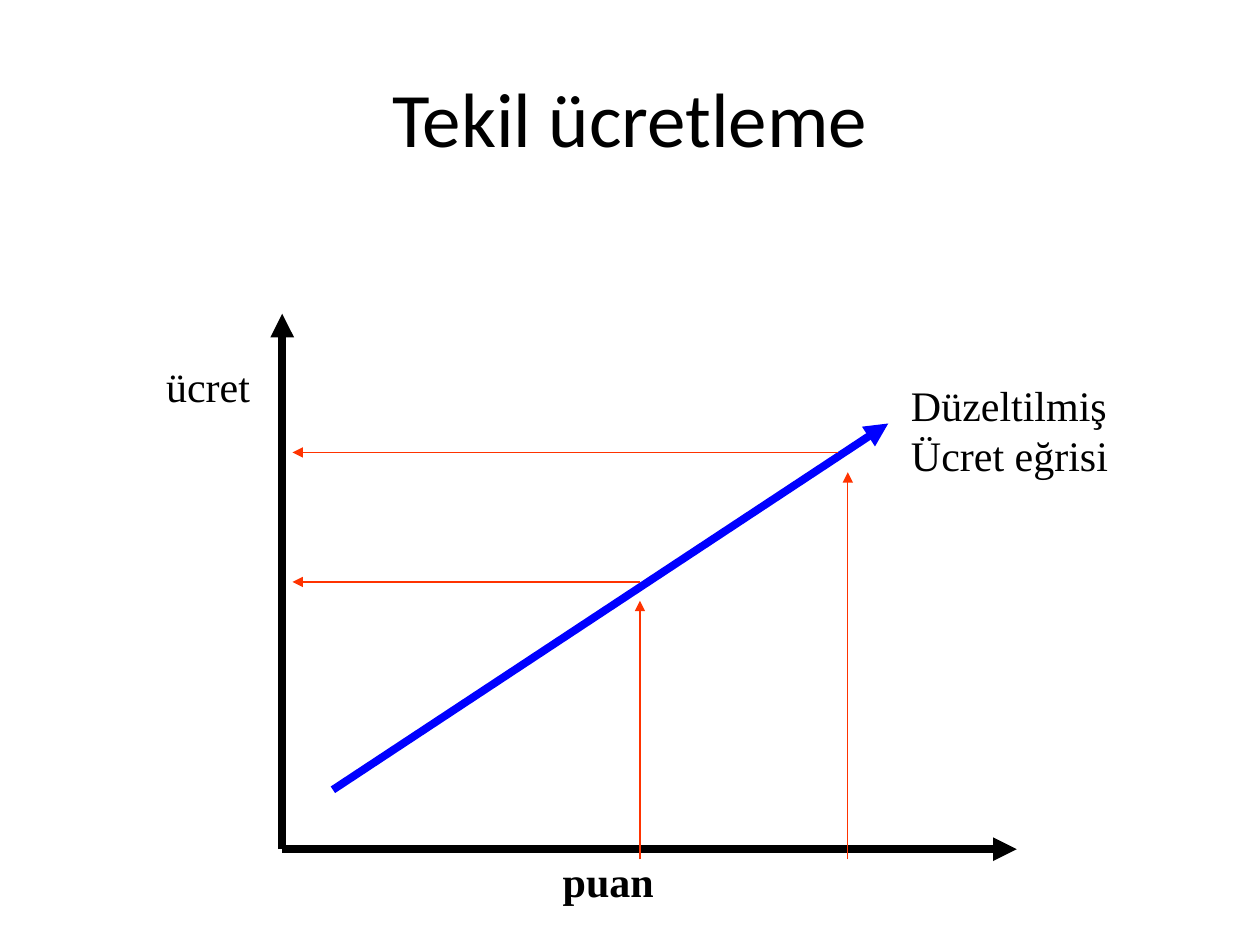
from dataclasses import dataclass

from lxml.etree import SubElement
from pptx import Presentation
from pptx.dml.color import RGBColor
from pptx.enum.shapes import MSO_CONNECTOR
from pptx.enum.text import MSO_ANCHOR, MSO_AUTO_SIZE, PP_ALIGN
from pptx.oxml.ns import qn
from pptx.util import Inches, Pt


@dataclass(frozen=True)
class Theme:
    ink: RGBColor = RGBColor(0, 0, 0)
    curve: RGBColor = RGBColor(0, 0, 255)
    guide: RGBColor = RGBColor(255, 51, 0)
    heading_font: str = "Calibri"
    label_font: str = "Times New Roman"
    heading_size: int = 44
    label_size: int = 24
    thick: float = 4.5
    thin: float = 0.75


@dataclass(frozen=True)
class Box:
    left: float
    top: float
    width: float
    height: float

    def across(self, percent):
        return Inches(self.width * percent / 100)

    def up(self, percent):
        return Inches(self.height * percent / 100)

    def point(self, x, y):
        return Inches(self.left) + self.across(x), Inches(self.top) + self.up(100 - y)


THEME = Theme()


def write(frame, wording, font, size, bold=False):
    frame.text = wording
    paragraph = frame.paragraphs[0]
    face = paragraph.runs[0].font
    face.name = font
    face.size = Pt(size)
    face.bold = bold
    face.color.rgb = THEME.ink
    return paragraph


def add_heading(slide, box, wording):
    heading = slide.shapes.title
    heading.left, heading.top = box.point(0, 100)
    heading.width, heading.height = box.across(100), box.up(100)
    heading.text_frame.vertical_anchor = MSO_ANCHOR.MIDDLE
    paragraph = write(heading.text_frame, wording, THEME.heading_font, THEME.heading_size)
    paragraph.alignment = PP_ALIGN.CENTER


def add_arrow(slide, box, start, end, color, weight):
    arrow = slide.shapes.add_connector(
        MSO_CONNECTOR.STRAIGHT, *box.point(*start), *box.point(*end)
    )
    arrow.line.color.rgb = color
    arrow.line.width = Pt(weight)
    SubElement(arrow.line._get_or_add_ln(), qn("a:tailEnd"), type="triangle")
    SubElement(arrow._element.spPr, qn("a:effectLst"))


def add_label(slide, box, corner, size, wording, bold=False):
    width, height = size
    label = slide.shapes.add_textbox(*box.point(*corner), box.across(width), box.up(height))
    frame = label.text_frame
    frame.word_wrap = True
    frame.auto_size = MSO_AUTO_SIZE.SHAPE_TO_FIT_TEXT
    write(frame, wording, THEME.label_font, THEME.label_size, bold)


def add_wage_plot(slide, box):
    origin = (0, 0)
    for axis_end in ((0, 100), (100, 0)):
        add_arrow(slide, box, origin, axis_end, THEME.ink, THEME.thick)
    add_arrow(slide, box, (6.9, 11.1), (82.5, 79.5), THEME.curve, THEME.thick)

    guide_foot, wage_edge = -1.9, 1.4
    for points, rise_end, wage_start, wage in (
        (48.7, 46.4, 48.7, 49.9),
        (77, 70.4, 75.6, 74.1),
    ):
        add_arrow(slide, box, (points, guide_foot), (points, rise_end), THEME.guide, THEME.thin)
        add_arrow(slide, box, (wage_start, wage), (wage_edge, wage), THEME.guide, THEME.thin)

    add_label(slide, box, (36.5, 0), (50, 11.8), "puan", bold=True)
    add_label(slide, box, (-17.5, 92.5), (17.5, 11.8), "ücret")
    add_label(slide, box, (83.9, 88.9), (41.9, 21.2), "Düzeltilmiş Ücret eğrisi")


def main():
    deck = Presentation()
    deck.slide_width, deck.slide_height = Inches(10), Inches(7.5)
    slide = deck.slides.add_slide(deck.slide_layouts[5])
    add_heading(slide, Box(0.5, 0.3, 9, 1.25), "Tekil ücretleme")
    add_wage_plot(slide, Box(2.24, 2.49, 5.83, 4.25))
    deck.save("out.pptx")


if __name__ == "__main__":
    main()
